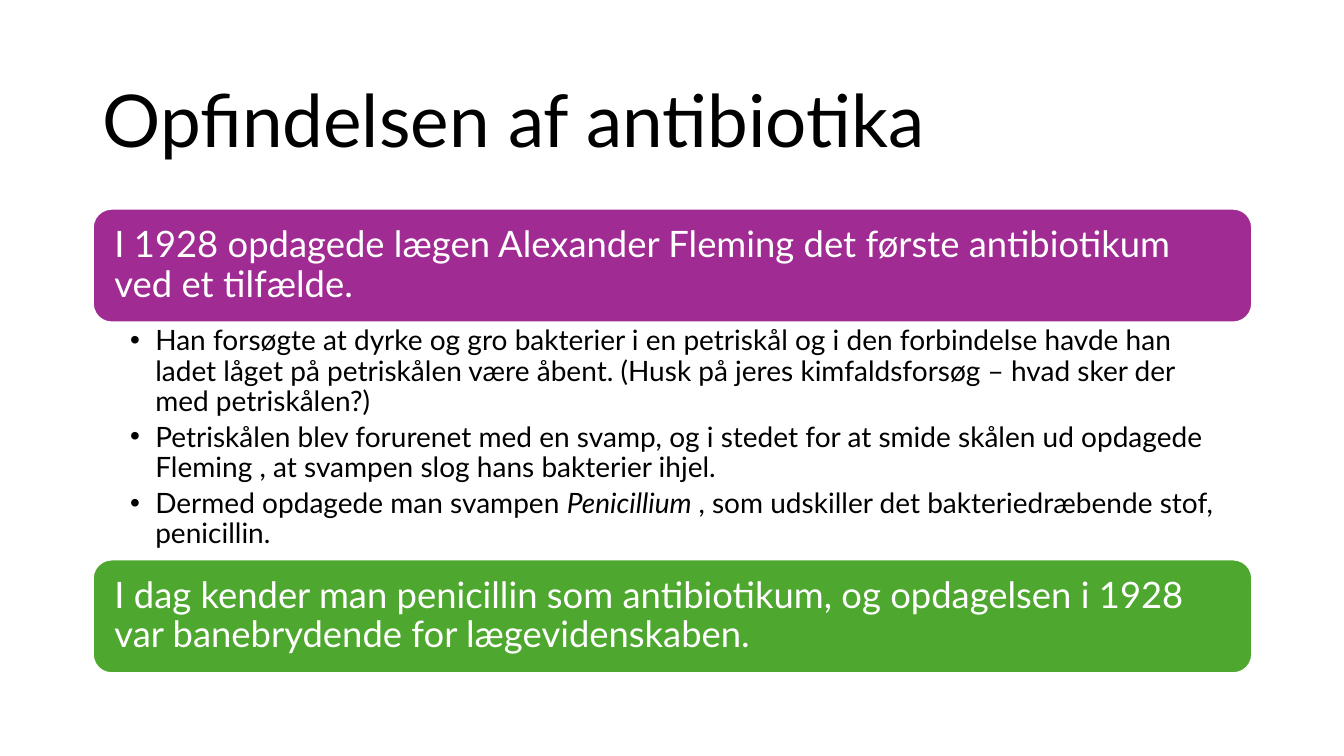
import dataclasses

import pptx
import pptx.dml.color
import pptx.enum.shapes
import pptx.enum.text
import pptx.oxml.ns
import pptx.util
from lxml import etree

Inches = pptx.util.Inches
Pt = pptx.util.Pt
ALIGN = pptx.enum.text.PP_ALIGN
ANCHOR = pptx.enum.text.MSO_ANCHOR


@dataclasses.dataclass(frozen=True)
class Theme:
    font: str = "Lato"
    ink: str = "000000"
    paper: str = "FFFFFF"
    purple: str = "A02B93"
    green: str = "4EA72E"
    title_size: int = 52
    banner_size: int = 26
    bullet_size: int = 20


THEME = Theme()
LEFT, WIDTH = 0.92, 11.5
BANNER_TOP, BANNER_HEIGHT, BULLETS_HEIGHT = 2.07, 1.13, 2.35

TITLE = "Opfindelsen af antibiotika"
DISCOVERY = "I 1928 opdagede lægen Alexander Fleming det første antibiotikum ved et tilfælde."
TODAY = (
    "I dag kender man penicillin som antibiotikum, og opdagelsen i 1928 "
    "var banebrydende for lægevidenskaben."
)
BULLETS = [
    [("Han forsøgte at dyrke og gro bakterier i en petriskål og i den forbindelse havde han "
      "ladet låget på petriskålen være åbent. (Husk på jeres kimfaldsforsøg – hvad sker der "
      "med petriskålen?)", False)],
    [("Petriskålen blev forurenet med en svamp, og i stedet for at smide skålen ud opdagede "
      "Fleming , at svampen slog hans bakterier ihjel.", False)],
    [("Dermed opdagede man svampen ", False),
     ("Penicillium ", True),
     (", som udskiller det bakteriedræbende stof, penicillin.", False)],
]


def apply(target, values):
    for name, value in values.items():
        setattr(target, name, value)


def color(value):
    return pptx.dml.color.RGBColor.from_string(value)


def place(shape, top, height):
    apply(shape, {"left": Inches(LEFT), "top": Inches(top),
                  "width": Inches(WIDTH), "height": Inches(height)})


def format_frame(frame, anchor, left, top, right, bottom):
    apply(frame, {
        "word_wrap": True,
        "auto_size": pptx.enum.text.MSO_AUTO_SIZE.NONE,
        "vertical_anchor": anchor,
        "margin_left": Inches(left), "margin_top": Inches(top),
        "margin_right": Inches(right), "margin_bottom": Inches(bottom),
    })


def write_para(para, spans, size, ink, space_after=0):
    apply(para, {"alignment": ALIGN.LEFT, "line_spacing": 0.9,
                 "space_before": Pt(0), "space_after": Pt(space_after)})
    for text, italic in spans:
        span = para.add_run()
        span.text = text
        apply(span.font, {"name": THEME.font, "size": Pt(size), "italic": italic})
        span.font.color.rgb = color(ink)


def add_bullet(para):
    properties = para._p.get_or_add_pPr()
    properties.set("marL", str(Inches(0.25)))
    properties.set("indent", str(Inches(-0.25)))
    for tag, key, value in (("a:buFont", "typeface", "Arial"), ("a:buChar", "char", "•")):
        etree.SubElement(properties, pptx.oxml.ns.qn(tag)).set(key, value)


def fill_title(title):
    place(title, 0.61, 1.24)
    format_frame(title.text_frame, ANCHOR.MIDDLE, 0.1, 0.05, 0.1, 0.05)
    write_para(title.text_frame.paragraphs[0], [(TITLE, False)], THEME.title_size, THEME.ink)


def fill_bullets(body, top):
    place(body, top, BULLETS_HEIGHT)
    frame = body.text_frame
    format_frame(frame, ANCHOR.TOP, 0.37, 0.04, 0.2, 0.04)
    for index, spans in enumerate(BULLETS):
        para = frame.add_paragraph() if index else frame.paragraphs[0]
        para.level = 1
        write_para(para, spans, THEME.bullet_size, THEME.ink, space_after=4)
        add_bullet(para)


def add_banner(page, text, top, fill):
    banner = page.shapes.add_shape(
        pptx.enum.shapes.MSO_SHAPE.ROUNDED_RECTANGLE,
        Inches(LEFT), Inches(top), Inches(WIDTH), Inches(BANNER_HEIGHT))
    banner.shadow.inherit = False
    banner.fill.solid()
    banner.fill.fore_color.rgb = color(fill)
    banner.line.color.rgb = color(THEME.paper)
    banner.line.width = Pt(1.5)
    format_frame(banner.text_frame, ANCHOR.MIDDLE, 0.16, 0.16, 0.16, 0.16)
    write_para(banner.text_frame.paragraphs[0], [(text, False)], THEME.banner_size, THEME.paper)


def main():
    deck = pptx.Presentation()
    apply(deck, {"slide_width": Inches(13.33), "slide_height": Inches(7.5)})
    page = deck.slides.add_slide(deck.slide_layouts[1])
    bullets_top = BANNER_TOP + BANNER_HEIGHT
    fill_title(page.shapes.title)
    add_banner(page, DISCOVERY, BANNER_TOP, THEME.purple)
    fill_bullets(page.placeholders[1], bullets_top)
    add_banner(page, TODAY, bullets_top + BULLETS_HEIGHT, THEME.green)
    deck.save("out.pptx")


if __name__ == "__main__":
    main()
